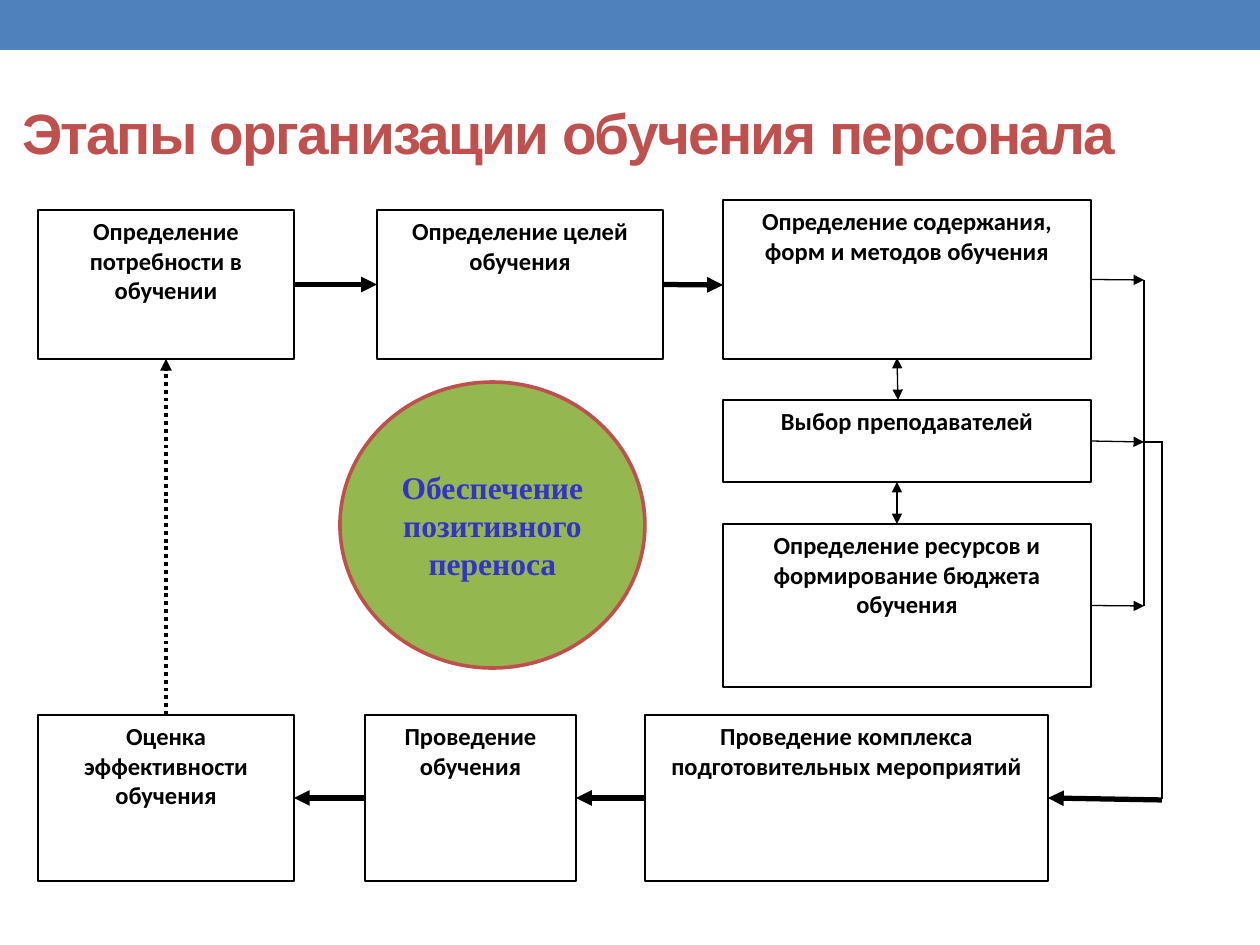
"""Build the slide on the stages of organising staff training."""
from lxml.etree import SubElement
from pptx import Presentation
from pptx.dml.color import RGBColor
from pptx.enum.dml import MSO_LINE
from pptx.enum.shapes import MSO_CONNECTOR, MSO_SHAPE
from pptx.enum.text import MSO_ANCHOR, PP_ALIGN
from pptx.oxml.ns import qn
from pptx.util import Emu, Pt

PX = 914400 / 126
TOP, LEFT, BOTTOM, RIGHT = range(4)


def px(*lengths):
    return [Emu(round(length * PX)) for length in lengths]


def add_block(geometry, place, fill, line, line_width, text, font, size, color, anchor):
    block = slide.shapes.add_shape(geometry, *px(*place))
    block.shadow.inherit = False
    block.fill.solid()
    block.fill.fore_color.rgb = RGBColor.from_string(fill)
    block.line.color.rgb = RGBColor.from_string(line)
    block.line.width = Pt(line_width)
    frame = block.text_frame
    frame.word_wrap = True
    frame.vertical_anchor = anchor
    frame.text = text
    paragraph = frame.paragraphs[0]
    paragraph.alignment = PP_ALIGN.CENTER
    letters = paragraph.runs[0].font
    letters.name, letters.size, letters.bold = font, Pt(size), True
    letters.color.rgb = RGBColor.from_string(color)
    return block


presentation = Presentation()
presentation.slide_width, presentation.slide_height = px(1260, 945)
slide = presentation.slides.add_slide(presentation.slide_layouts[6])

header = slide.shapes.add_shape(MSO_SHAPE.RECTANGLE, *px(0, 0, 1260, 50))
header.shadow.inherit = False
header.fill.solid()
header.fill.fore_color.rgb = RGBColor.from_string("4F81BD")
header.line.fill.background()

title = slide.shapes.add_textbox(*px(10, 88, 1187, 87))
title.text_frame.word_wrap = True
title.text_frame.vertical_anchor = MSO_ANCHOR.MIDDLE
title.text_frame.text = "Этапы организации обучения персонала"
heading = title.text_frame.paragraphs[0].runs[0]
heading.font.name, heading.font.size, heading.font.bold = "Arial", Pt(32.4), True
heading.font.color.rgb = RGBColor.from_string("C0504D")
heading.font._element.set("spc", "-100")

stage_plan = {
    "needs": ("Определение потребности в обучении", (38, 210, 256, 149)),
    "goals": ("Определение целей обучения", (377, 210, 286, 149)),
    "content": ("Определение содержания, форм и методов обучения", (723, 200, 368, 159)),
    "teachers": ("Выбор преподавателей", (723, 400, 368, 82)),
    "resources": ("Определение ресурсов и формирование бюджета обучения", (723, 524, 368, 163)),
    "preparation": ("Проведение комплекса подготовительных мероприятий", (645, 715, 403, 166)),
    "training": ("Проведение обучения", (365, 715, 211, 166)),
    "evaluation": ("Оценка эффективности обучения", (38, 715, 256, 166)),
}
stages = {
    stage: add_block(MSO_SHAPE.RECTANGLE, place, "FFFFFF", "000000", 0.75,
                     text, "Calibri", 14, "000000", MSO_ANCHOR.TOP)
    for stage, (text, place) in stage_plan.items()
}

links = [
    (("needs", RIGHT), ("goals", LEFT), 3, ["tailEnd"]),
    (("goals", RIGHT), (723, 285), 3, ["tailEnd"]),
    ((897, 482), (897, 524), 0.75, ["headEnd", "tailEnd"]),
    ((897, 358), (898, 400), 0.75, ["headEnd", "tailEnd"]),
    (("content", RIGHT), (1144, 280), 0.75, ["tailEnd"]),
    (("teachers", RIGHT), (1144, 442), 0.75, ["tailEnd"]),
    (("resources", RIGHT), (1144, 606), 0.75, ["tailEnd"]),
    ((1144, 280), (1144, 606), 0.75, []),
    ((1144, 442), (1162, 442), 0.75, []),
    ((1162, 441), (1162, 799), 0.75, []),
    ((1162, 800), ("preparation", RIGHT), 3, ["tailEnd"]),
    (("preparation", LEFT), ("training", RIGHT), 3, ["tailEnd"]),
    (("training", LEFT), ("evaluation", RIGHT), 3, ["tailEnd"]),
    (("evaluation", TOP), ("needs", BOTTOM), 2.25, ["tailEnd"]),
]
for start, end, width, arrowheads in links:
    start_joined, end_joined = start[0] in stages, end[0] in stages
    start_point = (0, 0) if start_joined else start
    end_point = (0, 0) if end_joined else end
    link = slide.shapes.add_connector(MSO_CONNECTOR.STRAIGHT, *px(*start_point, *end_point))
    if start_joined:
        link.begin_connect(stages[start[0]], start[1])
    if end_joined:
        link.end_connect(stages[end[0]], end[1])
    link.line.color.rgb = RGBColor.from_string("000000")
    link.line.width = Pt(width)
    if start[0] == "evaluation":
        link.line.dash_style = MSO_LINE.ROUND_DOT
    properties = link._element.spPr
    for arrowhead in arrowheads:
        SubElement(properties.find(qn("a:ln")), qn(f"a:{arrowhead}"), type="triangle")
    SubElement(properties, qn("a:effectLst"))

add_block(MSO_SHAPE.OVAL, (340, 382, 305, 286), "95B74F", "C0504D", 2.08,
          "Обеспечение позитивного переноса", "Times New Roman", 18, "3333CC", MSO_ANCHOR.MIDDLE)

presentation.save("out.pptx")
